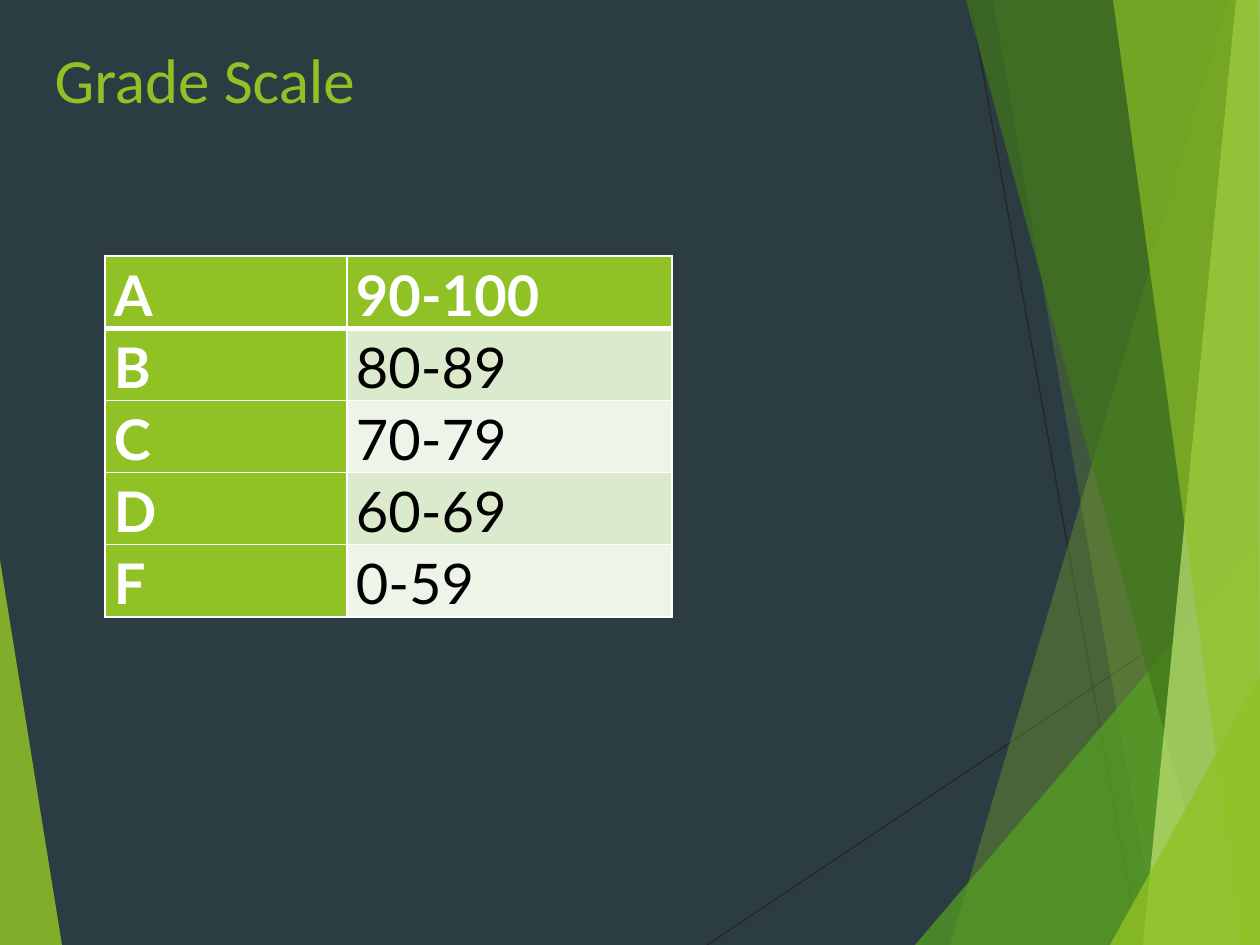
from lxml.etree import SubElement
from pptx import Presentation
from pptx.dml.color import RGBColor
from pptx.enum.shapes import MSO_CONNECTOR
from pptx.enum.text import MSO_ANCHOR, PP_ALIGN
from pptx.oxml.ns import qn
from pptx.util import Emu, Pt

SCALE = 914400 / 126  # EMU in one px
WIDTH, HEIGHT = 1260, 945

SLATE = RGBColor(0x2C, 0x3C, 0x43)
LIME = RGBColor(0x90, 0xC2, 0x26)
GREEN = RGBColor(0x54, 0xA0, 0x21)
FOREST = RGBColor(0x3F, 0x78, 0x19)
PALE_LIME = RGBColor(0xC0, 0xE4, 0x74)
BAND_DARK = RGBColor(0xDB, 0xE9, 0xCD)
BAND_LIGHT = RGBColor(0xEE, 0xF4, 0xE8)
CHARCOAL = RGBColor(0x26, 0x26, 0x26)
WHITE = RGBColor(0xFF, 0xFF, 0xFF)
BLACK = RGBColor(0, 0, 0)

RAYS = [(707, HEIGHT, WIDTH, 576), (970, 0, 1139, HEIGHT)]

# Outline, colour and opacity in percent, from back to front
FACETS = [
    ([(0, 560), (62, HEIGHT), (0, HEIGHT)], LIME, 85),
    ([(1229, 0), (950, HEIGHT), (WIDTH, HEIGHT), (WIDTH, 0)], LIME, 30),
    ([(993, 0), (1158, HEIGHT), (WIDTH, HEIGHT), (WIDTH, 0)], LIME, 20),
    ([(915, HEIGHT), (WIDTH, 541), (WIDTH, HEIGHT)], GREEN, 72),
    ([(966, 0), (1222, HEIGHT), (WIDTH, HEIGHT), (WIDTH, 0)], FOREST, 70),
    ([(1236, 0), (1143, HEIGHT), (WIDTH, HEIGHT), (WIDTH, 0)], PALE_LIME, 70),
    ([(1113, 0), (1242, HEIGHT), (WIDTH, HEIGHT), (1258, 0)], LIME, 65),
    ([(1110, HEIGHT), (WIDTH, 675), (WIDTH, HEIGHT)], LIME, 80),
]

GRADES = [("A", "90-100"), ("B", "80-89"), ("C", "70-79"),
          ("D", "60-69"), ("F", "0-59")]
COLUMN_WIDTHS = [242, 325]
ROW_HEIGHT = 68


def px(length):
    return Emu(round(length * SCALE))


def apply(target, values):
    for name, value in values.items():
        setattr(target, name, value)


def write(frame, text, color, **font):
    para = frame.paragraphs[0]
    para.alignment = PP_ALIGN.LEFT
    span = para.add_run()
    span.text = text
    apply(span.font, font)
    span.font.color.rgb = color
    return para


def add_ray(page, ends):
    ray = page.shapes.add_connector(MSO_CONNECTOR.STRAIGHT, *map(px, ends))
    ray.line.color.rgb = CHARCOAL
    ray.line.width = Pt(0.75)
    SubElement(ray._element.spPr, qn("a:effectLst"))


def add_facet(page, points, color, opacity):
    builder = page.shapes.build_freeform(*points[0], scale=SCALE)
    builder.add_line_segments(points[1:], close=True)
    facet = builder.convert_to_shape()
    facet.shadow.inherit = False
    facet.line.fill.background()
    facet.fill.solid()
    facet.fill.fore_color.rgb = color
    tint = facet._element.spPr.find(".//" + qn("a:srgbClr"))
    SubElement(tint, qn("a:alpha"), val=str(opacity * 1000))


def add_title(page, text):
    title = page.shapes.title
    apply(title, dict(left=px(42), top=px(31), width=px(1176), height=px(95)))
    apply(title.text_frame, dict(word_wrap=True,
                                 vertical_anchor=MSO_ANCHOR.MIDDLE))
    write(title.text_frame, text, LIME, name="Calibri", size=Pt(36))
    page.shapes._spTree.append(title._element)  # in front of the facets


def set_borders(cell, widths):
    properties = cell._tc.get_or_add_tcPr()
    for index, (side, points) in enumerate(widths.items()):
        border = SubElement(properties, qn(f"a:ln{side}"), w=str(Pt(points)))
        fill = SubElement(border, qn("a:solidFill"))
        SubElement(fill, qn("a:srgbClr"), val=str(WHITE))
        properties.insert(index, border)  # borders come before the fill


def format_cell(cell, text, row, column):
    accent = row == 0 or column == 0
    band = BAND_DARK if row % 2 else BAND_LIGHT
    apply(cell, dict(margin_left=px(9), margin_right=px(9),
                     margin_top=0, margin_bottom=0))
    cell.fill.solid()
    cell.fill.fore_color.rgb = LIME if accent else band
    para = write(cell.text_frame, text, WHITE if accent else BLACK,
                 name="Lato", size=Pt(32), bold=accent)
    para.line_spacing = 1.07
    set_borders(cell, {"L": 1, "R": 1, "T": 3 if row == 1 else 1,
                       "B": 3 if row == 0 else 1})


def add_grade_table(page):
    frame = page.shapes.add_table(
        len(GRADES), len(COLUMN_WIDTHS), px(105), px(256),
        px(sum(COLUMN_WIDTHS)), px(ROW_HEIGHT * len(GRADES)))
    table = frame.table
    table.first_col = True
    for column, width in zip(table.columns, COLUMN_WIDTHS):
        column.width = px(width)
    for row, texts in enumerate(GRADES):
        table.rows[row].height = px(ROW_HEIGHT)
        for column, text in enumerate(texts):
            format_cell(table.cell(row, column), text, row, column)


def main():
    deck = Presentation()
    apply(deck, dict(slide_width=px(WIDTH), slide_height=px(HEIGHT)))
    page = deck.slides.add_slide(deck.slide_layouts[5])
    page.background.fill.solid()
    page.background.fill.fore_color.rgb = SLATE

    # Backdrop of thin rays and translucent facets
    for ends in RAYS:
        add_ray(page, ends)
    for facet in FACETS:
        add_facet(page, *facet)

    # Content
    add_title(page, "Grade Scale")
    add_grade_table(page)
    deck.save("out.pptx")


if __name__ == "__main__":
    main()
